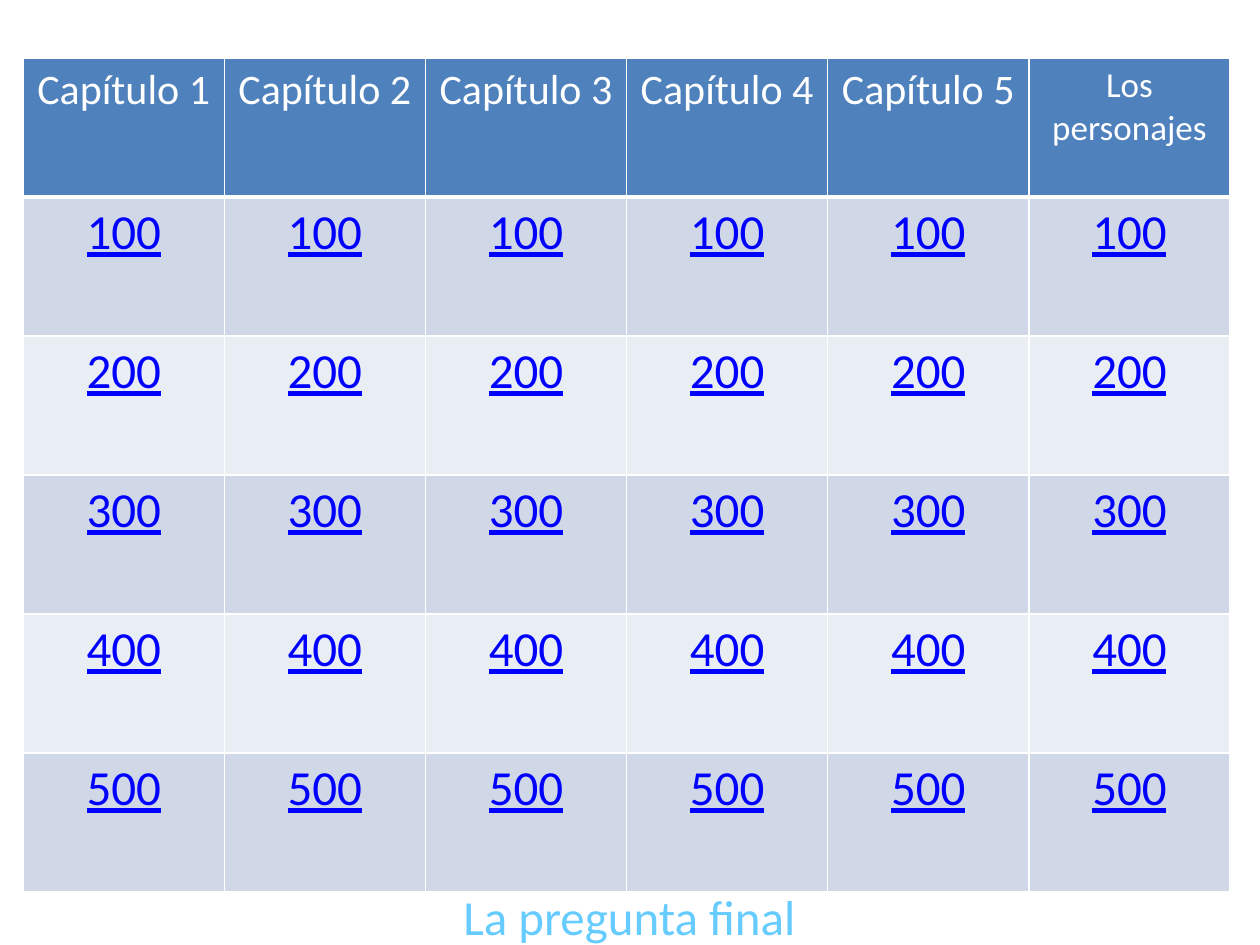
from dataclasses import dataclass

from lxml import etree
from pptx import Presentation
from pptx.dml.color import RGBColor
from pptx.enum import text
from pptx.oxml import ns
from pptx.util import Pt


@dataclass(frozen=True)
class Theme:
    font: str = "Calibri"
    white: str = "FFFFFF"
    header_fill: str = "4F81BD"
    bands: tuple[str, str] = ("D0D8E8", "E9EDF4")
    link: str = "0000FF"
    final: str = "66CCFF"
    heading_size: float = 24
    small_heading_size: float = 20
    value_size: float = 28
    thin_line: float = 1
    thick_line: float = 3


@dataclass(frozen=True)
class Box:
    left: float
    top: float
    width: float
    height: float


@dataclass(frozen=True)
class Category:
    title: str
    size: float


THEME = Theme()
BOARD = Box(13.2, 33.12, 689.76, 476.64)
FINAL_QUESTION = Box(213.12, 503.28, 293.04, 41.04)
CATEGORIES = [Category(f"Capítulo {number}", THEME.heading_size) for number in range(1, 6)]
CATEGORIES.append(Category("Los personajes", THEME.small_heading_size))
VALUES = range(100, 600, 100)


def write_text(frame, content: str, *, size: float, color: str, underline: bool = False) -> None:
    paragraph = frame.paragraphs[0]
    paragraph.alignment = text.PP_ALIGN.CENTER
    run = paragraph.add_run()
    run.text = content
    font = run.font
    font.name = THEME.font
    font.size = Pt(size)
    font.bold = False
    font.underline = underline
    font.color.rgb = RGBColor.from_string(color)


def set_borders(cell, bottom: float) -> None:
    """Draw white cell borders; the schema wants them ahead of the fill."""
    properties = cell._tc.get_or_add_tcPr()
    widths = dict.fromkeys(("lnL", "lnR", "lnT"), THEME.thin_line) | {"lnB": bottom}
    for position, (tag, width) in enumerate(widths.items()):
        line = etree.Element(ns.qn(f"a:{tag}"), w=str(Pt(width)))
        fill = etree.SubElement(line, ns.qn("a:solidFill"))
        etree.SubElement(fill, ns.qn("a:srgbClr"), val=THEME.white)
        properties.insert(position, line)


def style_cell(cell, fill: str, bottom: float = THEME.thin_line) -> None:
    cell.fill.solid()
    cell.fill.fore_color.rgb = RGBColor.from_string(fill)
    set_borders(cell, bottom)


def add_board(slide, box: Box) -> None:
    row_count, column_count = len(VALUES) + 1, len(CATEGORIES)
    table = slide.shapes.add_table(
        row_count, column_count, Pt(box.left), Pt(box.top), Pt(box.width), Pt(box.height)
    ).table
    for row in table.rows:
        row.height = Pt(box.height / row_count)
    for column, category in enumerate(CATEGORIES):
        table.columns[column].width = Pt(box.width / column_count)
        heading = table.cell(0, column)
        style_cell(heading, THEME.header_fill, THEME.thick_line)
        write_text(heading.text_frame, category.title, size=category.size, color=THEME.white)
        for index, value in enumerate(VALUES):
            cell = table.cell(index + 1, column)
            style_cell(cell, THEME.bands[index % 2])
            write_text(cell.text_frame, str(value), size=THEME.value_size,
                       color=THEME.link, underline=True)


def add_final_question(slide, box: Box) -> None:
    frame = slide.shapes.add_textbox(
        Pt(box.left), Pt(box.top), Pt(box.width), Pt(box.height)
    ).text_frame
    frame.word_wrap = True
    frame.auto_size = text.MSO_AUTO_SIZE.SHAPE_TO_FIT_TEXT
    write_text(frame, "La pregunta final", size=THEME.value_size, color=THEME.final)


def main() -> None:
    presentation = Presentation()
    presentation.slide_width, presentation.slide_height = Pt(720), Pt(540)
    slide = presentation.slides.add_slide(presentation.slide_layouts[6])
    add_board(slide, BOARD)
    add_final_question(slide, FINAL_QUESTION)
    presentation.save("out.pptx")


if __name__ == "__main__":
    main()
